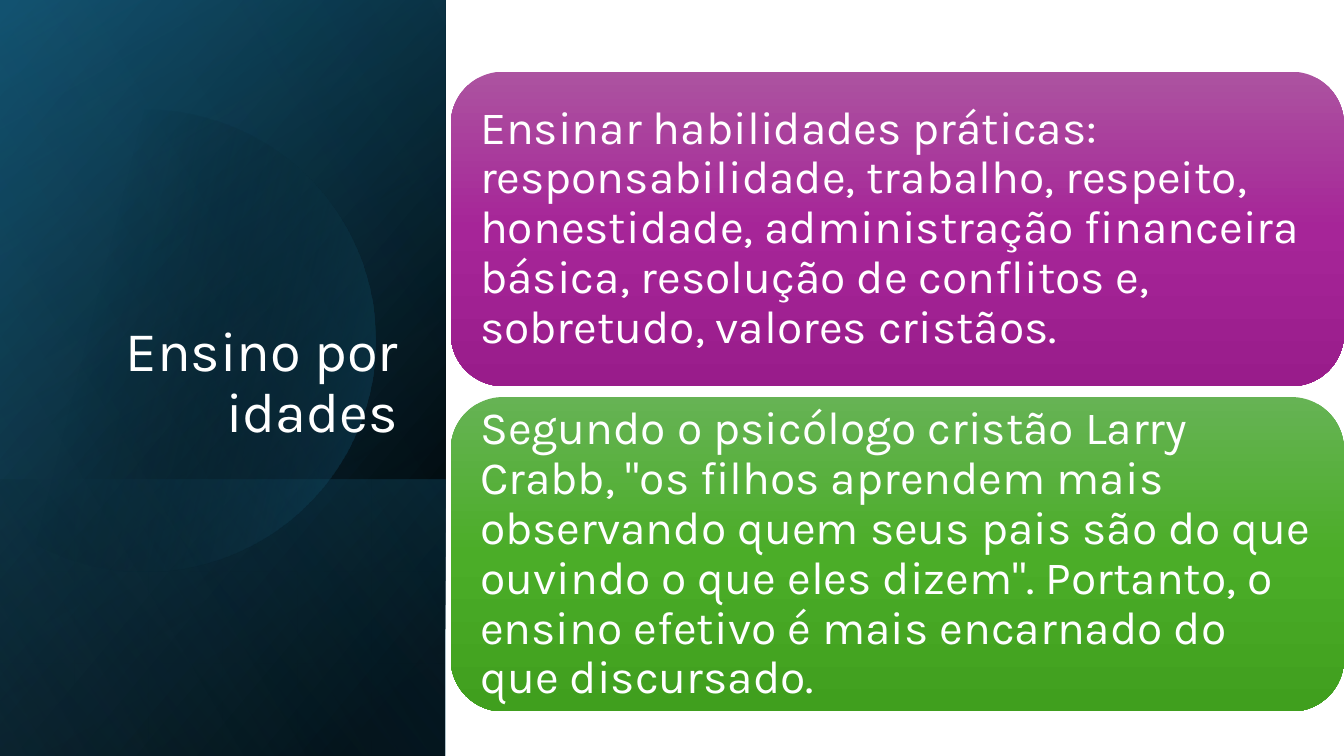
from math import acos, cos, radians, sin, degrees

from lxml.etree import SubElement
from pptx import Presentation
from pptx.dml.color import RGBColor
from pptx.enum.shapes import MSO_SHAPE as SHAPE
from pptx.enum.text import MSO_ANCHOR as ANCHOR, PP_ALIGN as ALIGN
from pptx.oxml.ns import qn
from pptx.util import Pt

FONT = "Karla"
COLORS = {
    "white": "FFFFFF",
    "black": "000000",
    "navy": "104862",
    "teal": "156082",
    "sky": "46B1E1",
    "purple_light": "AC53A0",
    "purple": "A62598",
    "purple_dark": "991C8B",
    "green_light": "66B354",
    "green": "4BAD28",
    "green_dark": "409F1E",
}
SLIDE_W, SLIDE_H = 960, 540
PANEL_W = 318.2
FOOT_H = 197.3
CARD_X, CARD_Y, CARD_W, CARD_H, CARD_STEP = 322, 51.2, 638, 224.6, 232.4
CIRCLE_X, CIRCLE_Y, CIRCLE_R = 103, 243.4, 164.9

PANEL_LAYERS = [
    (SLIDE_H, 50, [(8, "black", 100), (100, "navy", 100)]),
    (SLIDE_H, 30, [(0, "black", 0), (99, "teal", 46)]),
    (FOOT_H, 130, [(2, "teal", 29), (100, "black", 30)]),
]
CIRCLE_STOPS = [(29, "black", 0), (100, "teal", 43)]
GLOW_LAYER = (SLIDE_H, 120, [(0, "black", 0), (99, "sky", 11)])

CARDS = [
    ("purple", "Ensinar habilidades práticas: responsabilidade, trabalho, respeito, "
     "honestidade, administração financeira básica, resolução de conflitos e, "
     "sobretudo, valores cristãos."),
    ("green", "Segundo o psicólogo cristão Larry Crabb, \"os filhos aprendem mais "
     "observando quem seus pais são do que ouvindo o que eles dizem\". Portanto, o "
     "ensino efetivo é mais encarnado do que discursado."),
]


def fill_gradient(sp, angle, stops):
    sp.shadow.inherit = False
    sp.line.fill.background()
    sp.fill.gradient()
    grad = sp._element.spPr.find(qn("a:gradFill"))
    grad.find(qn("a:lin")).set("ang", str(angle * 60000))
    gs_list = grad.find(qn("a:gsLst"))
    for gs in list(gs_list):
        gs_list.remove(gs)
    for pos, color, opacity in stops:
        gs = SubElement(gs_list, qn("a:gs"), pos=str(pos * 1000))
        clr = SubElement(gs, qn("a:srgbClr"), val=COLORS[color])
        if opacity < 100:
            SubElement(clr, qn("a:alpha"), val=str(opacity * 1000))


def format_text(tf, size, align, anchor):
    tf.word_wrap = True
    tf.vertical_anchor = anchor
    p = tf.paragraphs[0]
    p.alignment = align
    p.line_spacing = 0.9
    font = p.runs[0].font
    font.name = FONT
    font.size = Pt(size)
    font.color.rgb = RGBColor.from_string(COLORS["white"])


def add_panel_layer(slide, height, angle, stops):
    left = (PANEL_W - height) / 2
    top = SLIDE_H - (height + PANEL_W) / 2
    sp = slide.shapes.add_shape(SHAPE.RECTANGLE, Pt(left), Pt(top), Pt(height), Pt(PANEL_W))
    sp.rotation = 90
    sp._element.spPr.xfrm.set("flipH", "1")
    fill_gradient(sp, angle, stops)


def add_cut_circle(slide):
    limit = degrees(acos(-CIRCLE_X / CIRCLE_R))
    steps = 120
    angles = [radians(limit * (2 * i / steps - 1)) for i in range(steps + 1)]
    points = [(Pt(CIRCLE_X + CIRCLE_R * cos(a)), Pt(CIRCLE_Y + CIRCLE_R * sin(a)))
              for a in angles]
    builder = slide.shapes.build_freeform(*points[0])
    builder.add_line_segments(points[1:], close=True)
    fill_gradient(builder.convert_to_shape(), 14, CIRCLE_STOPS)


def add_title(slide, text):
    title = slide.shapes.title
    title.left, title.top, title.width, title.height = Pt(46), Pt(132.5), Pt(245.5), Pt(188.6)
    title.text_frame.text = text
    format_text(title.text_frame, 40, ALIGN.RIGHT, ANCHOR.BOTTOM)
    slide.shapes._spTree.append(title._element)


def add_card(slide, top, color, text):
    sp = slide.shapes.add_shape(SHAPE.ROUNDED_RECTANGLE, Pt(CARD_X), Pt(top),
                                Pt(CARD_W), Pt(CARD_H))
    fill_gradient(sp, 90, [(0, color + "_light", 100), (50, color, 100),
                           (100, color + "_dark", 100)])
    tf = sp.text_frame
    tf.text = text
    tf.margin_left = tf.margin_right = tf.margin_top = tf.margin_bottom = Pt(10)
    format_text(tf, 33, ALIGN.LEFT, ANCHOR.MIDDLE)


def main():
    prs = Presentation()
    prs.slide_width, prs.slide_height = Pt(SLIDE_W), Pt(SLIDE_H)
    slide = prs.slides.add_slide(prs.slide_layouts[5])
    for layer in PANEL_LAYERS:
        add_panel_layer(slide, *layer)
    add_cut_circle(slide)
    add_panel_layer(slide, *GLOW_LAYER)
    add_title(slide, "Ensino por idades")
    for i, (color, text) in enumerate(CARDS):
        add_card(slide, CARD_Y + i * CARD_STEP, color, text)
    prs.save("out.pptx")


if __name__ == "__main__":
    main()
